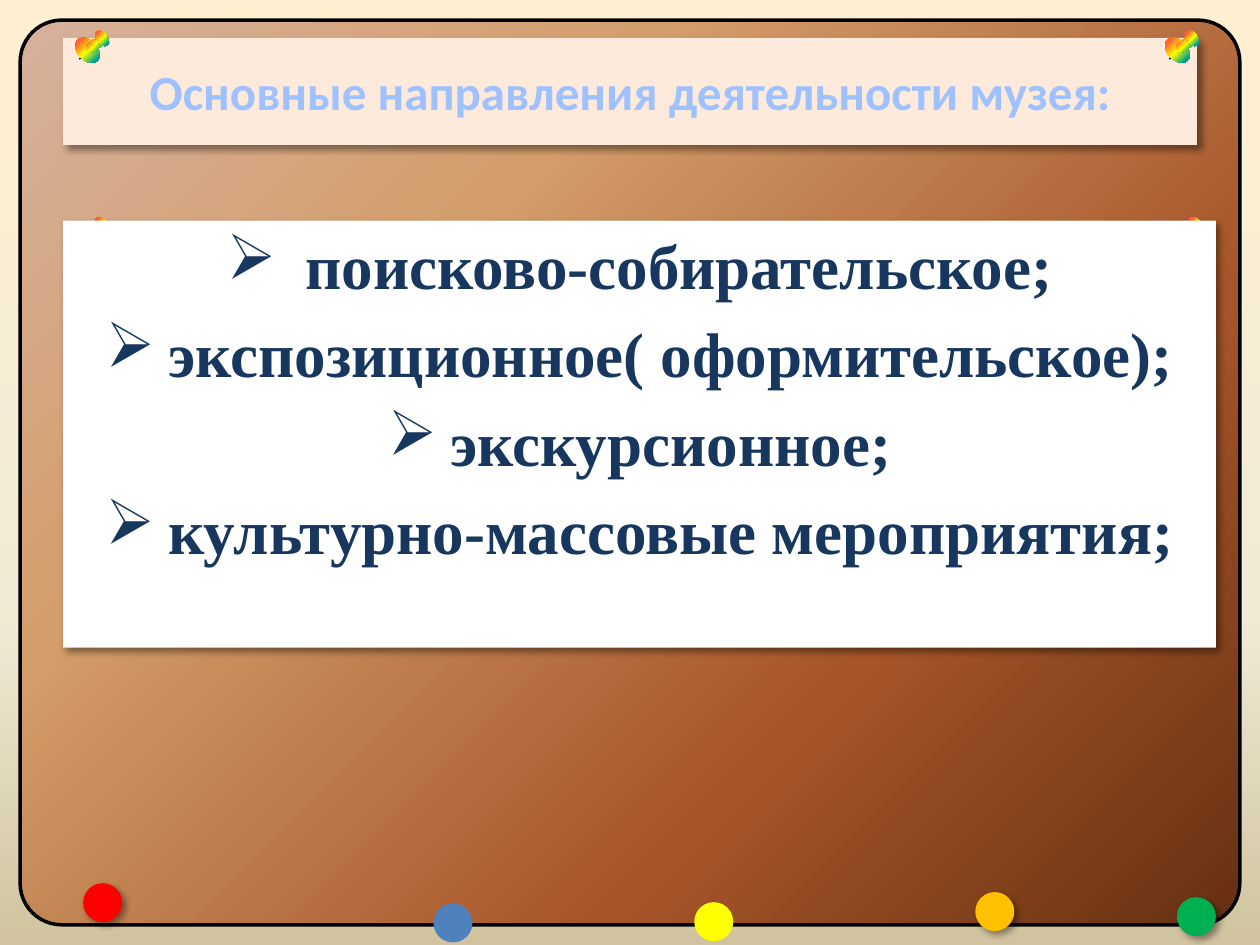
"""Build the slide on the main lines of work of a museum."""
from lxml import etree
from pptx import Presentation
from pptx.dml.color import RGBColor
from pptx.enum import shapes, text
from pptx.oxml import ns
from pptx.util import Inches, Pt

COLORS = {
    "frame": "000000", "title_card": "FDEADA", "title": "A0C1FF",
    "card": "FFFFFF", "directions": "17375E", "red": "FF0000",
    "orange": "FFC000", "green": "00B050", "yellow": "FFFF00", "blue": "4F81BD",
}
BACKGROUND = [(0, "FFEFD1"), (65, "F0EBD5"), (100, "D1C39F")]
WOOD = [(0, "D6B19C"), (30, "D49E6C"), (70, "A65528"), (100, "663012")]
RAINBOW = [(0, "FF3399"), (25, "FF6633"), (50, "FFFF00"), (75, "01A78F"), (100, "3366FF")]
DIRECTIONS = [
    " поисково-собирательское;",
    "экспозиционное( оформительское);",
    "экскурсионное;",
    "культурно-массовые мероприятия;",
]
PIN_PARTS = [
    (shapes.MSO_SHAPE.OVAL, 0, 0, 0.23, 0.16, 47.4),
    (shapes.MSO_SHAPE.ROUNDED_RECTANGLE, 0.14, -0.05, 0.08, 0.16, 53.2),
    (shapes.MSO_SHAPE.OVAL, 0.16, -0.06, 0.14, 0.09, 51.5),
]
BALLS = [
    (0.66, 7.01, "red", True), (7.74, 7.08, "orange", True),
    (9.34, 7.12, "green", True), (5.51, 7.16, "yellow", False),
    (3.44, 7.17, "blue", False),
]


def rgb(name):
    """Return the named colour."""
    return RGBColor.from_string(COLORS[name])


def add_xml(parent, tag, **attributes):
    """Append a DrawingML element and return it."""
    child = etree.SubElement(parent, ns.qn(tag))
    for key, value in attributes.items():
        child.set(key, str(value))
    return child


def paint_gradient(fill, properties, stops, radial=True):
    """Fill with a gradient, from the top left corner or straight down."""
    fill.solid()
    solid = properties.find(ns.qn("a:solidFill"))
    gradient = etree.Element(ns.qn("a:gradFill"), rotWithShape="1")
    stop_list = add_xml(gradient, "a:gsLst")
    for position, color in stops:
        stop = add_xml(stop_list, "a:gs", pos=position * 1000)
        add_xml(stop, "a:srgbClr", val=color)
    if radial:
        circle = add_xml(gradient, "a:path", path="circle")
        add_xml(circle, "a:fillToRect", r=100000, b=100000)
    else:
        add_xml(gradient, "a:lin", ang=5400000, scaled=0)
    properties.replace(solid, gradient)


def cast_shadow(shape):
    """Give a shape a soft shadow to the lower right."""
    shape.shadow.inherit = False
    effects = shape.element.spPr.find(ns.qn("a:effectLst"))
    shadow = add_xml(effects, "a:outerShdw", blurRad=Pt(4), dist=Pt(3),
                     dir=2700000, algn="tl", rotWithShape=0)
    color = add_xml(shadow, "a:srgbClr", val="000000")
    add_xml(color, "a:alpha", val=40000)


def add_plain(parent, kind, left, top, width, height, color=None):
    """Add a shape without line or shadow."""
    shape = parent.shapes.add_shape(
        kind, Inches(left), Inches(top), Inches(width), Inches(height))
    shape.shadow.inherit = False
    shape.line.fill.background()
    if color:
        shape.fill.solid()
        shape.fill.fore_color.rgb = rgb(color)
    return shape


def add_frame(slide):
    """Add the wooden board behind everything."""
    board = add_plain(slide, shapes.MSO_SHAPE.ROUNDED_RECTANGLE, 0.16, 0.16, 9.68, 7.18)
    board.adjustments[0] = 0.046
    paint_gradient(board.fill, board.element.spPr, WOOD)
    board.line.color.rgb = rgb("frame")
    board.line.width = Pt(2)


def format_run(run, font, size, color):
    """Set bold type of the given font, size and colour."""
    run.font.name, run.font.size, run.font.bold = font, Pt(size), True
    run.font.color.rgb = rgb(color)


def add_title(slide):
    """Place the title on its card, above the board."""
    title = slide.shapes.title
    slide.shapes.element.append(title.element)
    title.left, title.top = Inches(0.5), Inches(0.3)
    title.width, title.height = Inches(9), Inches(0.85)
    geometry = etree.Element(ns.qn("a:prstGeom"), prst="foldedCorner")
    add_xml(geometry, "a:avLst")
    title.element.spPr.insert(1, geometry)
    title.fill.solid()
    title.fill.fore_color.rgb = rgb("title_card")
    cast_shadow(title)
    frame = title.text_frame
    frame.text = "Основные направления деятельности музея:"
    frame.vertical_anchor = text.MSO_ANCHOR.MIDDLE
    heading = frame.paragraphs[0]
    heading.alignment = text.PP_ALIGN.CENTER
    format_run(heading.runs[0], "Calibri", 28, "title")


def add_pin(slide, left, top, needle):
    """Add a rainbow push pin as a group."""
    pin = slide.shapes.add_group_shape()
    if needle:
        tip = pin.shapes.add_connector(
            shapes.MSO_CONNECTOR.STRAIGHT, Inches(left + 0.09), Inches(top + 0.11),
            Inches(left + 0.05), Inches(top + 0.15))
        tip.line.color.rgb = rgb("frame")
        tip.line.width = Pt(0.75)
        add_xml(tip.element.spPr, "a:effectLst")
    for kind, dx, dy, width, height, angle in PIN_PARTS:
        part = add_plain(pin, kind, left + dx, top + dy, width, height)
        part.rotation = angle
        if kind == shapes.MSO_SHAPE.ROUNDED_RECTANGLE:
            part.adjustments[0] = 0.4
        paint_gradient(part.fill, part.element.spPr, RAINBOW)


def add_ball(slide, left, top, color, shaded):
    """Add a coloured ball at the foot of the board."""
    ball = add_plain(slide, shapes.MSO_SHAPE.OVAL, left, top, 0.31, 0.31, color)
    if shaded:
        cast_shadow(ball)


def add_directions(slide):
    """Add the white card with the list of directions."""
    card = add_plain(slide, shapes.MSO_SHAPE.RECTANGLE, 0.5, 1.75, 9.15, 3.39, "card")
    cast_shadow(card)
    frame = card.text_frame
    frame.word_wrap = True
    frame.vertical_anchor = text.MSO_ANCHOR.TOP
    frame.text = "\n".join(DIRECTIONS)
    for direction in frame.paragraphs:
        direction.alignment = text.PP_ALIGN.CENTER
        direction.space_before = Pt(7.2)
        properties = direction._p.get_or_add_pPr()
        properties.set("marL", str(Inches(0.5)))
        properties.set("indent", str(Inches(-0.5)))
        add_xml(properties, "a:buChar", char="➢")
        format_run(direction.runs[0], "Times New Roman", 36, "directions")


def main():
    """Build and save the presentation."""
    presentation = Presentation()
    presentation.slide_width, presentation.slide_height = Inches(10), Inches(7.5)
    slide = presentation.slides.add_slide(presentation.slide_layouts[5])
    backdrop = slide.background.fill
    backdrop.solid()
    paint_gradient(backdrop, slide.element.find(".//" + ns.qn("p:bgPr")), BACKGROUND, False)
    add_frame(slide)
    add_title(slide)
    for left, top, needle in [(0.58, 0.32, True), (9.23, 0.32, True),
                              (0.58, 1.8, False), (9.26, 1.8, False)]:
        add_pin(slide, left, top, needle)
    for ball in BALLS:
        add_ball(slide, *ball)
    add_directions(slide)
    presentation.save("out.pptx")


if __name__ == "__main__":
    main()
